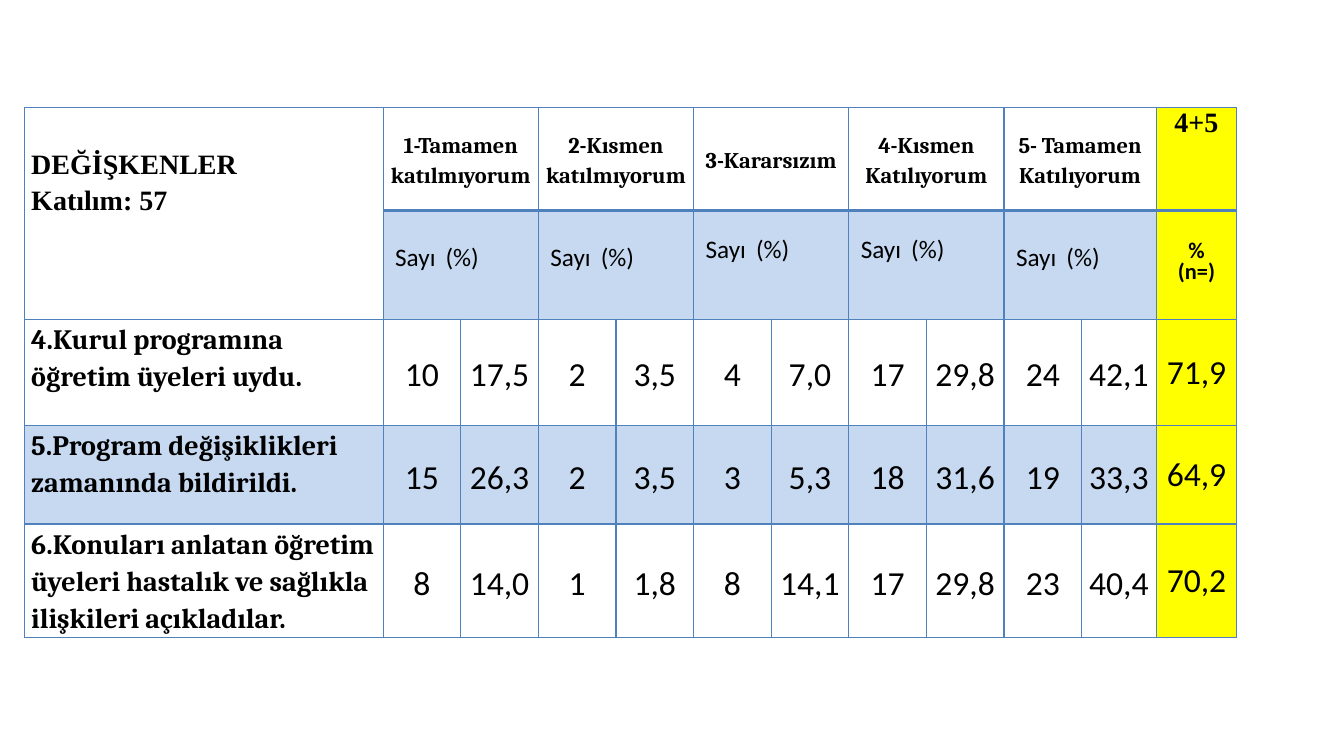
from dataclasses import dataclass

import lxml.etree
import pptx
import pptx.dml.color
import pptx.enum.text
import pptx.oxml.ns
import pptx.util

Inches = pptx.util.Inches
Pt = pptx.util.Pt
ALIGN = pptx.enum.text.PP_ALIGN
ANCHOR = pptx.enum.text.MSO_ANCHOR
qn = pptx.oxml.ns.qn

COLOURS = {"text": "000000", "line": "4F81BD", "band": "C6D9F1", "total": "FFFF00"}
COLUMNS = [3.56] + [0.77] * 9 + [0.74, 0.8]
ROWS = [1.02, 1.06, 1.05, 0.98, 1.13]
TABLE_LEFT, TABLE_TOP = 0.24, 1.07
TOTAL = len(COLUMNS) - 1
THIN, THICK = 1, 2.25


@dataclass(frozen=True)
class Style:
    font: str
    size: float
    bold: bool = False
    centred: bool = True
    anchor: ANCHOR = ANCHOR.MIDDLE
    spacing: float | pptx.util.Length = 1.15
    side: float = 0.07
    top: float = 0
    bottom: float = 0
    indent: float = 0
    tab: float = 0


@dataclass(frozen=True)
class Answer:
    title: str
    tab: float
    bottom: float = 0


@dataclass(frozen=True)
class Question:
    label: str
    values: str
    total: str
    fill: str | None = None


CORNER = Style("Times New Roman", 20, True, False, ANCHOR.TOP, top=0.37)
HEADING = Style("Cambria", 16, True)
TOTAL_HEADING = Style("Times New Roman", 20, True, anchor=ANCHOR.TOP, spacing=1.0)
TOTAL_UNIT = Style("Calibri", 16, True, spacing=Pt(15))
LABEL = Style("Cambria", 20, True, False, ANCHOR.TOP)
VALUE = Style("Calibri", 24)
TOTAL_VALUE = Style("Calibri", 24, spacing=1.0, side=0.01, top=0.01)

ANSWERS = [
    Answer("1-Tamamen katılmıyorum", 0.9),
    Answer("2-Kısmen katılmıyorum", 0.9),
    Answer("3-Kararsızım", 0.68, 0.17),
    Answer("4-Kısmen Katılıyorum", 0.74, 0.17),
    Answer("5- Tamamen Katılıyorum", 0.74),
]
QUESTIONS = [
    Question("4.Kurul programına öğretim üyeleri uydu.",
             "10 17,5 2 3,5 4 7,0 17 29,8 24 42,1", "71,9"),
    Question("5.Program değişiklikleri zamanında bildirildi.",
             "15 26,3 2 3,5 3 5,3 18 31,6 19 33,3", "64,9", "band"),
    Question("6.Konuları anlatan öğretim üyeleri hastalık ve sağlıkla ilişkileri açıkladılar.",
             "8 14,0 1 1,8 8 14,1 17 29,8 23 40,4", "70,2"),
]


def draw_borders(cell, top: float, bottom: float) -> None:
    properties = cell._tc.get_or_add_tcPr()
    for side, width in (("L", THIN), ("R", THIN), ("T", top), ("B", bottom)):
        line = lxml.etree.SubElement(properties, qn(f"a:ln{side}"), w=str(Pt(width)))
        fill = lxml.etree.SubElement(line, qn("a:solidFill"))
        lxml.etree.SubElement(fill, qn("a:srgbClr"), val=COLOURS["line"])


def fill_cell(cell, text: str, style: Style, fill: str | None = None) -> None:
    if fill:
        cell.fill.solid()
        cell.fill.fore_color.rgb = pptx.dml.color.RGBColor.from_string(COLOURS[fill])
    cell.vertical_anchor = style.anchor
    cell.margin_left = cell.margin_right = Inches(style.side)
    cell.margin_top, cell.margin_bottom = Inches(style.top), Inches(style.bottom)
    cell.text_frame.text = text
    for para in cell.text_frame.paragraphs:
        para.alignment = ALIGN.CENTER if style.centred else ALIGN.LEFT
        para.line_spacing = style.spacing
        if style.tab:
            set_tab(para, style.indent, style.tab)
        for span in para.runs:
            span.font.name = style.font
            span.font.size = Pt(style.size)
            span.font.bold = style.bold
            span.font.color.rgb = pptx.dml.color.RGBColor.from_string(COLOURS["text"])


def set_tab(para, indent: float, position: float) -> None:
    properties = para._p.get_or_add_pPr()
    properties.set("marL", str(Inches(indent)))
    properties.set("indent", "0")
    stops = lxml.etree.SubElement(properties, qn("a:tabLst"))
    lxml.etree.SubElement(stops, qn("a:tab"), pos=str(Inches(position)), algn="l")


def add_survey_table(page):
    """Add the empty grid with its sizes and borders."""
    table = page.shapes.add_table(
        len(ROWS), len(COLUMNS), Inches(TABLE_LEFT), Inches(TABLE_TOP),
        Inches(sum(COLUMNS)), Inches(sum(ROWS))).table
    table.first_row = table.horz_banding = False
    for column, width in zip(table.columns, COLUMNS):
        column.width = Inches(width)
    for row, height in zip(table.rows, ROWS):
        row.height = Inches(height)
    for r in range(len(ROWS)):
        for c in range(len(COLUMNS)):
            cell = table.cell(r, c)
            draw_borders(cell, THICK if r == 1 and c else THIN,
                         THICK if r == 0 and c else THIN)
            cell.fill.background()
    return table


def fill_headings(table) -> None:
    table.cell(0, 0).merge(table.cell(1, 0))
    fill_cell(table.cell(0, 0), "DEĞİŞKENLER\nKatılım: 57", CORNER)
    for number, answer in enumerate(ANSWERS):
        first = 1 + 2 * number
        for r in (0, 1):
            table.cell(r, first).merge(table.cell(r, first + 1))
        fill_cell(table.cell(0, first), answer.title, HEADING)
        unit = Style("Calibri", 18, centred=False, spacing=Pt(12),
                     bottom=answer.bottom, indent=0.05, tab=answer.tab)
        fill_cell(table.cell(1, first), "Sayı\t(%)", unit, "band")
    fill_cell(table.cell(0, TOTAL), "4+5", TOTAL_HEADING, "total")
    fill_cell(table.cell(1, TOTAL), "%\n(n=)", TOTAL_UNIT, "total")


def fill_questions(table) -> None:
    for r, question in enumerate(QUESTIONS, start=2):
        fill_cell(table.cell(r, 0), question.label, LABEL, question.fill)
        for c, value in enumerate(question.values.split(), start=1):
            fill_cell(table.cell(r, c), value, VALUE, question.fill)
        fill_cell(table.cell(r, TOTAL), question.total, TOTAL_VALUE, "total")


def main() -> None:
    deck = pptx.Presentation()
    deck.slide_width, deck.slide_height = Inches(13.33), Inches(7.5)
    page = deck.slides.add_slide(deck.slide_layouts[6])
    table = add_survey_table(page)
    fill_headings(table)
    fill_questions(table)
    deck.save("out.pptx")


if __name__ == "__main__":
    main()
